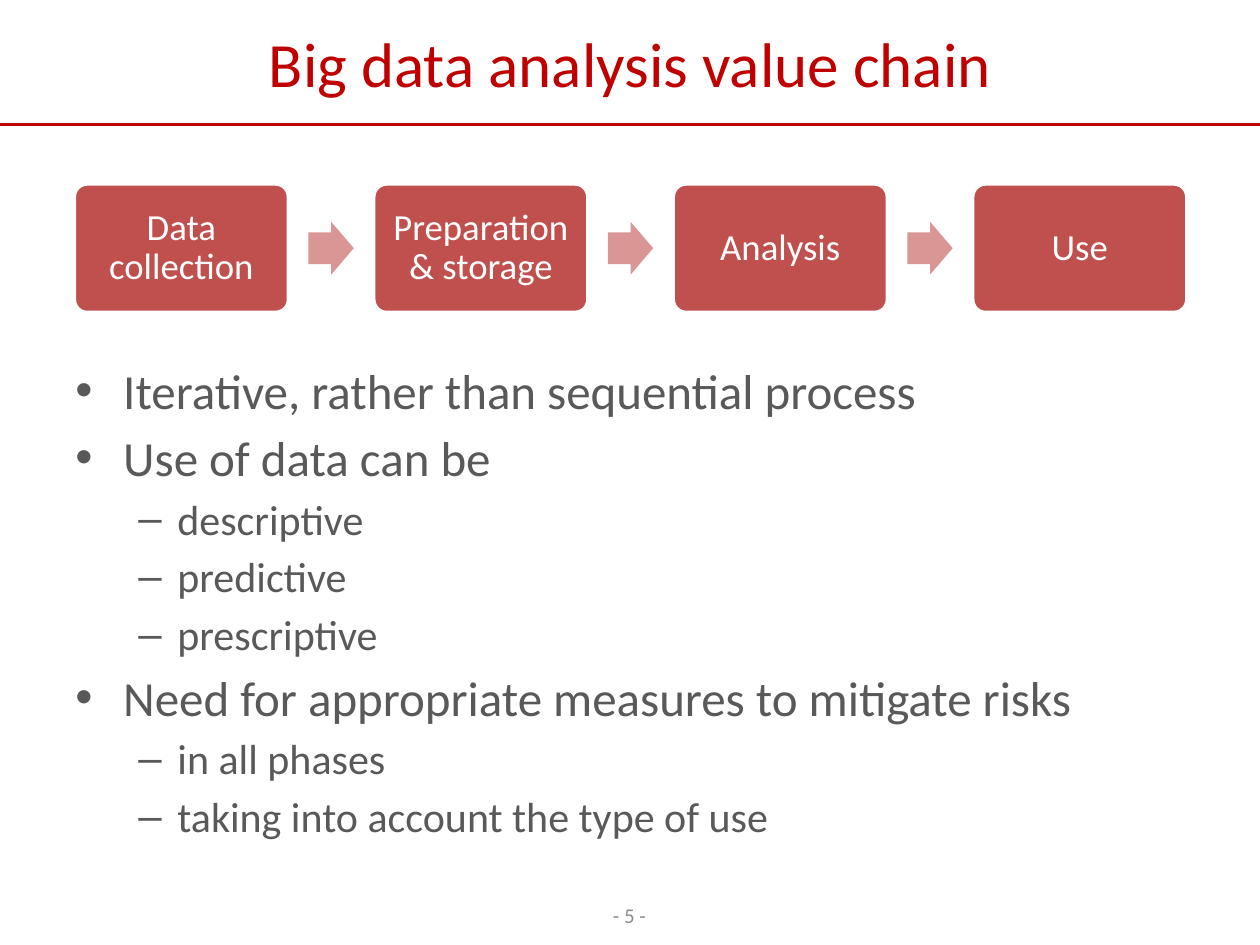
import pptx
import pptx.util
import pptx.dml.color
import pptx.enum.shapes
import pptx.enum.text
import pptx.oxml.ns
from dataclasses import dataclass
from lxml import etree
from pptx.util import Inches, Pt


@dataclass(frozen=True)
class Theme:
    """Colours, font and type sizes of the deck."""
    font: str = "Calibri"
    accent: str = "C00000"
    step: str = "C0504D"
    arrow: str = "D99694"
    body: str = "595959"
    muted: str = "8C8C8C"
    white: str = "FFFFFF"
    title_size: int = 36
    step_size: int = 21
    level_sizes: tuple = (28, 24)
    footer_size: int = 12


THEME = Theme()
STEPS = ("Data collection", "Preparation & storage", "Analysis", "Use")
POINTS = (
    (0, "Iterative, rather than sequential process"),
    (0, "Use of data can be"),
    (1, "descriptive"),
    (1, "predictive"),
    (1, "prescriptive"),
    (0, "Need for appropriate measures to mitigate risks"),
    (1, "in all phases"),
    (1, "taking into account the type of use"),
)
LEVELS = (("•", 0.38, 0.38, 4.7), ("–", 0.81, 0.31, 4.1))


def colour(value):
    """Return the colour object for a hex value."""
    return pptx.dml.color.RGBColor.from_string(value)


def add_span(para, text, size, value):
    """Add one formatted run to a paragraph."""
    span = para.add_run()
    span.text = text
    span.font.name = THEME.font
    span.font.size = Pt(size)
    span.font.color.rgb = colour(value)


def add_centred_text(frame, text, size, value):
    """Write one centred line or label into a text frame."""
    frame.word_wrap = True
    frame.vertical_anchor = pptx.enum.text.MSO_ANCHOR.MIDDLE
    para = frame.paragraphs[0]
    para.alignment = pptx.enum.text.PP_ALIGN.CENTER
    add_span(para, text, size, value)
    return para


def add_bullet(para, level):
    """Give a paragraph the bullet, indent and spacing of its level."""
    mark, margin, hanging, _ = LEVELS[level]
    para.level = level
    properties = para._p.get_or_add_pPr()
    properties.set("marL", str(Inches(margin)))
    properties.set("indent", str(-Inches(hanging)))
    bullet_font = etree.SubElement(properties, pptx.oxml.ns.qn("a:buFont"))
    bullet_font.set("typeface", "Arial")
    bullet = etree.SubElement(properties, pptx.oxml.ns.qn("a:buChar"))
    bullet.set("char", mark)


def add_header(page, left, top, width, height):
    """Place the title and the rule along its lower edge."""
    box = page.shapes.add_textbox(Inches(left), Inches(top), Inches(width), Inches(height))
    add_centred_text(box.text_frame, "Big data analysis value chain",
                     THEME.title_size, THEME.accent)
    bottom = Inches(top + height)
    rule = page.shapes.add_connector(
        pptx.enum.shapes.MSO_CONNECTOR.STRAIGHT,
        Inches(left), bottom, Inches(left + width), bottom)
    rule.line.color.rgb = colour(THEME.accent)
    rule.line.width = Pt(1.5)
    etree.SubElement(rule._element.spPr, pptx.oxml.ns.qn("a:effectLst"))


def add_block(page, kind, adjustments, fill, left, top, width, height):
    """Add one flat filled shape of the chain."""
    block = page.shapes.add_shape(
        kind, Inches(left), Inches(top), Inches(width), Inches(height))
    block.shadow.inherit = False
    for index, value in enumerate(adjustments):
        block.adjustments[index] = value
    block.fill.solid()
    block.fill.fore_color.rgb = colour(fill)
    block.line.fill.background()
    return block


def add_chain(page, left, top, width, height):
    """Spread the steps evenly over the box, with an arrow in each gap."""
    kinds = pptx.enum.shapes.MSO_SHAPE
    step_width, arrow_width, arrow_height = 1.7, 0.36, 0.42
    pitch = (width - step_width) / (len(STEPS) - 1)
    arrow_offset = (step_width + pitch - arrow_width) / 2
    for index, label in enumerate(STEPS):
        step_left = left + index * pitch
        step = add_block(page, kinds.ROUNDED_RECTANGLE, (0.1,), THEME.step,
                         step_left, top, step_width, height)
        step.line.color.rgb = colour(THEME.white)
        step.line.width = Pt(2)
        frame = step.text_frame
        frame.margin_left = frame.margin_right = Inches(0.09)
        frame.margin_top = frame.margin_bottom = Inches(0.09)
        para = add_centred_text(frame, label, THEME.step_size, THEME.white)
        para.line_spacing = 0.9
        if index < len(STEPS) - 1:
            add_block(page, kinds.RIGHT_ARROW, (0.6, 0.5), THEME.arrow,
                      step_left + arrow_offset, top + (height - arrow_height) / 2,
                      arrow_width, arrow_height)


def add_points(page, left, top, width, height):
    """Place the two-level bullet list."""
    box = page.shapes.add_textbox(Inches(left), Inches(top), Inches(width), Inches(height))
    frame = box.text_frame
    frame.word_wrap = True
    for index, (level, text) in enumerate(POINTS):
        para = frame.add_paragraph() if index else frame.paragraphs[0]
        add_bullet(para, level)
        para.space_before = Pt(LEVELS[level][3] if index else 0)
        add_span(para, text, THEME.level_sizes[level], THEME.body)


def add_footer(page, left, top, width, height):
    """Place the page number."""
    box = page.shapes.add_textbox(Inches(left), Inches(top), Inches(width), Inches(height))
    add_centred_text(box.text_frame, "- 5 - ", THEME.footer_size, THEME.muted)


def main():
    """Build the deck and save it."""
    deck = pptx.Presentation()
    deck.slide_width, deck.slide_height = Inches(10), Inches(7.5)
    page = deck.slides.add_slide(deck.slide_layouts[6])
    add_header(page, 0, 0, 10, 0.99)
    add_points(page, 0.5, 2.81, 9, 4.12)
    add_chain(page, 0.59, 1.46, 8.83, 1.02)
    add_footer(page, 3.85, 7.06, 2.33, 0.4)
    deck.save("out.pptx")


if __name__ == "__main__":
    main()
